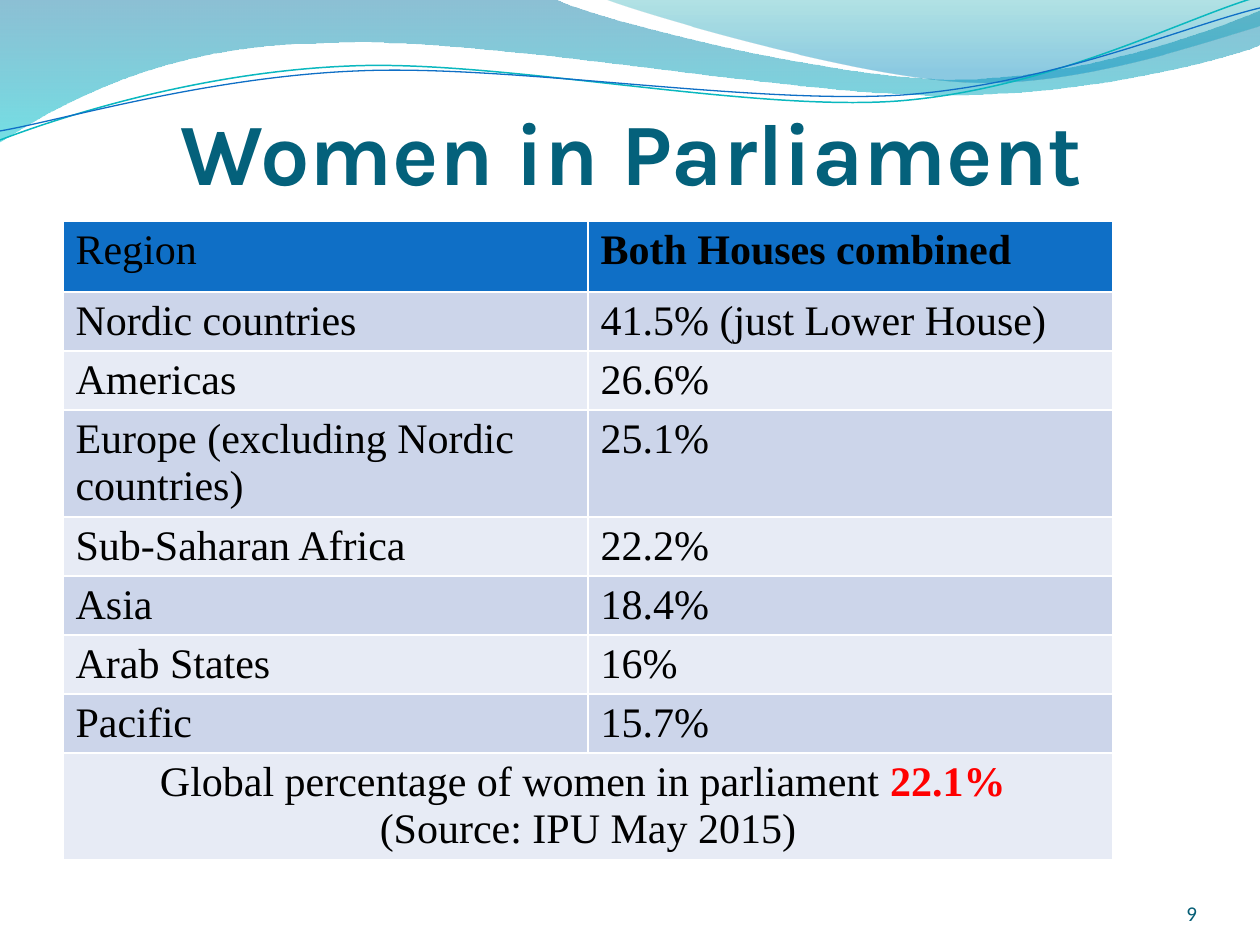
"""Build the slide on women in parliament: wave header, title, table and page number."""
from dataclasses import dataclass

from lxml.etree import SubElement
from pptx import Presentation
from pptx.dml.color import RGBColor
from pptx.enum.text import MSO_ANCHOR, PP_ALIGN
from pptx.oxml.ns import qn
from pptx.util import Pt


@dataclass(frozen=True)
class Theme:
    title: str = "04617B"
    number: str = "045D75"
    header: str = "0F6FC6"
    bands: tuple = ("E7EBF5", "CCD5EA")
    ink: str = "000000"
    accent: str = "FF0000"
    border: str = "FFFFFF"
    title_font: str = "Karla"
    table_font: str = "Times New Roman"
    number_font: str = "Calibri"
    title_size: int = 50
    table_size: int = 24
    number_size: int = 12


theme = Theme()
PX = 914400 / 126


def add_text(para, text, font=theme.table_font, size=theme.table_size,
             color=theme.ink, bold=False, align=PP_ALIGN.LEFT):
    para.alignment = align
    span = para.add_run()
    span.text = text
    span.font.name = font
    span.font.size = Pt(size)
    span.font.bold = bold
    span.font.color.rgb = RGBColor.from_string(color)


def add_outline(page, start, segments, close):
    points = [(x * PX, y * PX) for segment in segments
              for x, y in zip(segment[::2], segment[1::2])]
    builder = page.shapes.build_freeform(start[0] * PX, start[1] * PX)
    builder.add_line_segments(points, close=close)
    outline = builder.convert_to_shape()
    outline.shadow.inherit = False
    steps = iter(list(outline.element.iter(qn("a:lnTo"))))
    for segment in segments:
        first = next(steps)
        if len(segment) == 6:
            curve = SubElement(first.getparent(), qn("a:cubicBezTo"))
            first.addprevious(curve)
            for step in (first, next(steps), next(steps)):
                curve.append(step[0])
                step.getparent().remove(step)
    return outline


deck = Presentation()
deck.slide_width = round(1260 * PX)
deck.slide_height = round(945 * PX)
page = deck.slides.add_slide(deck.slide_layouts[6])

waves = [
    ((0, -1),
     [(554, -1), (600, 21, 837, 79, 955, 79), (1075, 79, 1207, 33, 1260, 11),
      (1261, 45), (1238, 55, 1096, 96, 940, 95), (784, 95, 481, 35, 324, 43),
      (163, 44, 58, 105, -1, 142), (0, -1)],
     [(0, "0074A1", 45), (1, "00C6CF", 55)]),
    ((604, -1),
     [(641, 14, 859, 78, 969, 82), (1079, 87, 1211, 40, 1260, 26),
      (1260, 0), (604, -1)],
     [(0, "00A1A9", 30), (0.8, "008BBF", 45)]),
]
for start, segments, stops in waves:
    wave = add_outline(page, start, segments, close=True)
    wave.line.fill.background()
    wave.fill.gradient()
    wave.fill.gradient_angle = 270
    for stop, (position, color, opacity) in zip(wave.fill.gradient_stops, stops):
        stop.position = position
        stop.color.rgb = RGBColor.from_string(color)
    for tint, (position, color, opacity) in zip(wave.element.iter(qn("a:srgbClr")), stops):
        SubElement(tint, qn("a:alpha"), val=str(opacity * 1000))

strands = [
    ((0, 140),
     [(60, 117, 199, 72, 349, 66), (498, 59, 747, 112, 898, 101),
      (1050, 89, 1182, 19, 1257, -3)], "0AB8BF", 0.85),
    ((0, 131),
     [(59, 121, 207, 77, 357, 71), (508, 64, 752, 105, 903, 95),
      (1053, 84, 1185, 26, 1260, 8)], "0F6FC6", 0.75),
]
for start, segments, color, width in strands:
    strand = add_outline(page, start, segments, close=False)
    strand.fill.background()
    strand.line.color.rgb = RGBColor.from_string(color)
    strand.line.width = Pt(width)

labels = [
    ("Women in Parliament", (65, 76, 1134, 127), 6,
     dict(font=theme.title_font, size=theme.title_size, color=theme.title,
          bold=True, align=PP_ALIGN.CENTER)),
    ("9", (1092, 876, 105, 50), 0,
     dict(font=theme.number_font, size=theme.number_size, color=theme.number,
          align=PP_ALIGN.RIGHT)),
]
for text, bounds, top_inset, style in labels:
    box = page.shapes.add_textbox(*(round(length * PX) for length in bounds))
    frame = box.text_frame
    frame.word_wrap = True
    frame.vertical_anchor = MSO_ANCHOR.BOTTOM
    frame.margin_left = frame.margin_right = frame.margin_bottom = 0
    frame.margin_top = round(top_inset * PX)
    add_text(frame.paragraphs[0], text, **style)

rows = [
    (71, "Region", "Both Houses combined"),
    (59, "Nordic countries", "41.5% (just Lower House)"),
    (59, "Americas", "26.6%"),
    (106, "Europe (excluding Nordic countries)", "25.1%"),
    (59, "Sub-Saharan Africa", "22.2%"),
    (59, "Asia", "18.4%"),
    (59, "Arab States", "16%"),
    (59, "Pacific", "15.7%"),
    (105, "", ""),
]
bounds = (63, 221, 1050, sum(row[0] for row in rows))
table = page.shapes.add_table(
    len(rows), 2, *(round(length * PX) for length in bounds)).table
for index, (height, *texts) in enumerate(rows):
    table.rows[index].height = round(height * PX)
    for column, text in enumerate(texts):
        cell = table.cell(index, column)
        cell.margin_bottom = 0
        properties = cell._tc.get_or_add_tcPr()
        for side in ("lnL", "lnR", "lnT", "lnB"):
            edge = SubElement(properties, qn(f"a:{side}"), w=str(Pt(1)))
            paint = SubElement(edge, qn("a:solidFill"))
            SubElement(paint, qn("a:srgbClr"), val=theme.border)
        cell.fill.solid()
        cell.fill.fore_color.rgb = RGBColor.from_string(
            theme.bands[index % 2] if index else theme.header)
        if text:
            add_text(cell.text_frame.paragraphs[0], text,
                     bold=index == 0 and column == 1)

summary = table.cell(len(rows) - 1, 0)
summary.merge(table.cell(len(rows) - 1, 1))
total = summary.text_frame.paragraphs[0]
add_text(total, "Global percentage of women in parliament ", align=PP_ALIGN.CENTER)
add_text(total, "22.1% ", color=theme.accent, bold=True, align=PP_ALIGN.CENTER)
add_text(summary.text_frame.add_paragraph(), "(Source: IPU May 2015)",
         align=PP_ALIGN.CENTER)

deck.save("out.pptx")
